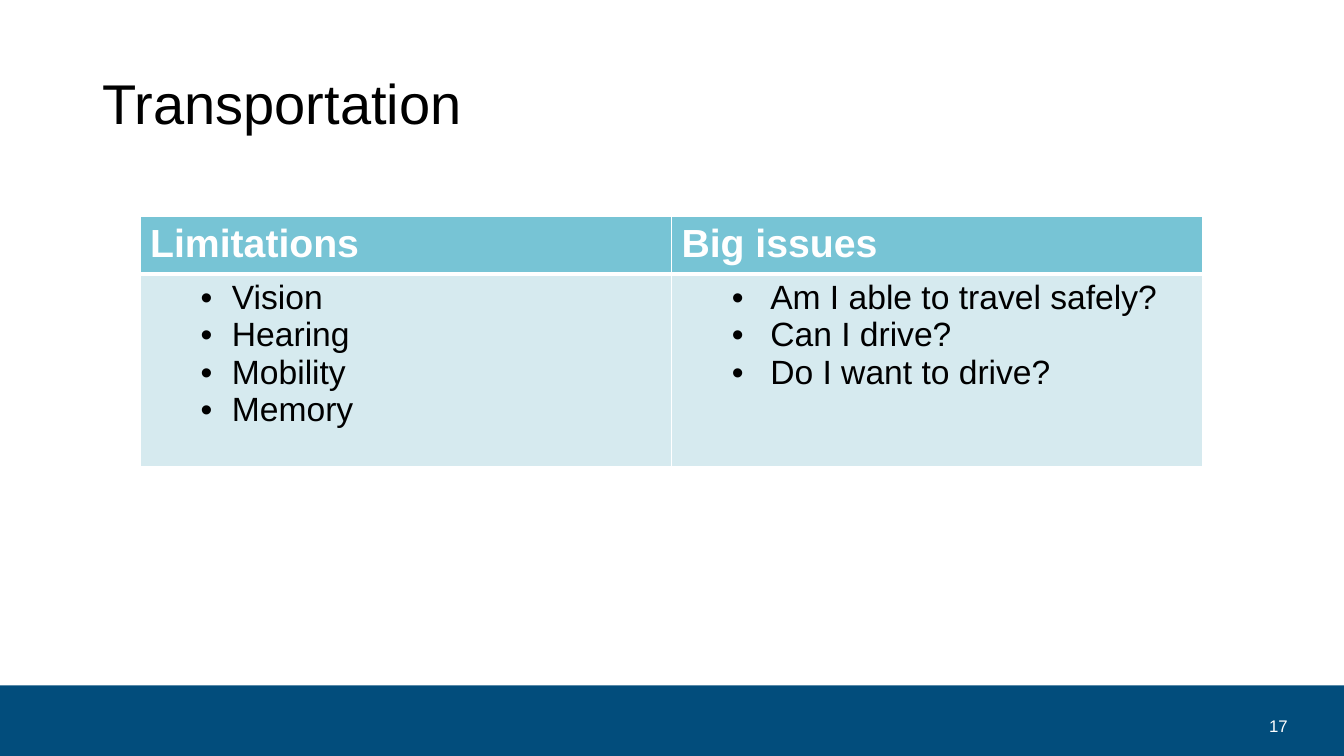
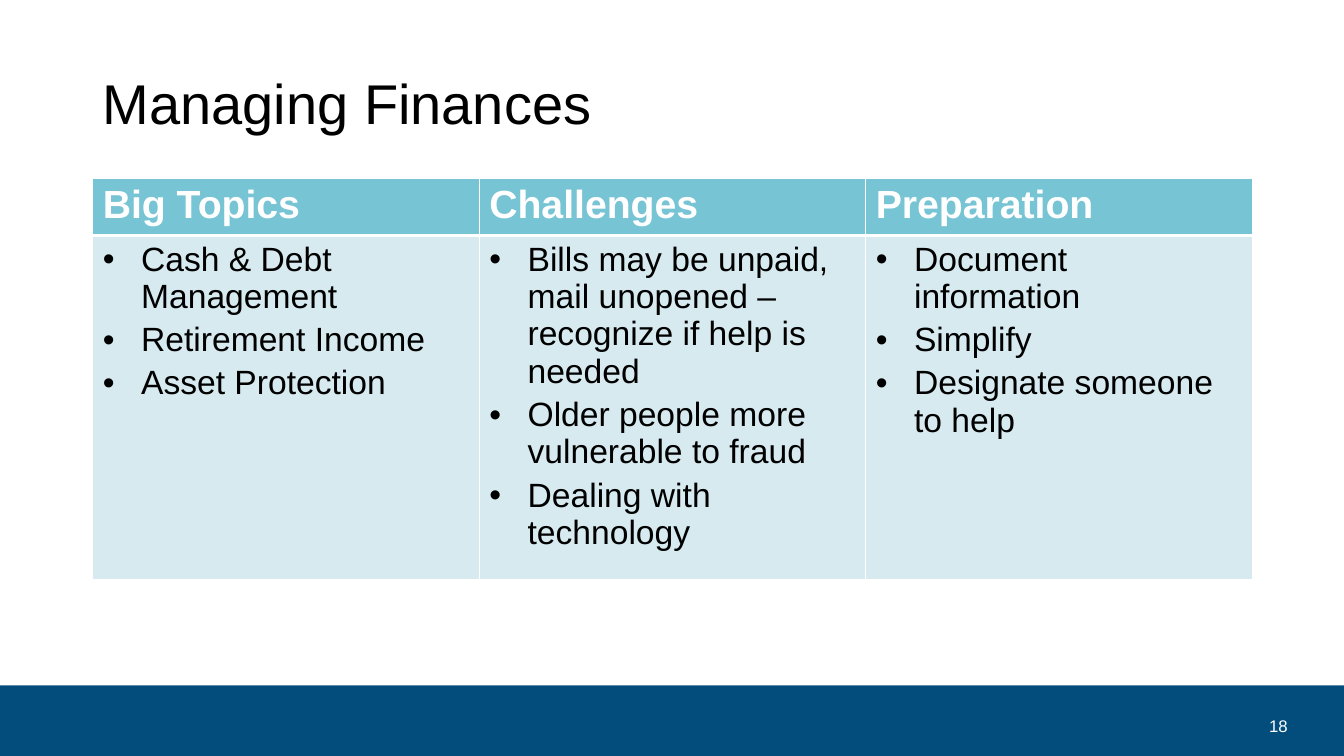
from lxml.etree import SubElement
from pptx import Presentation
from pptx.dml.color import RGBColor
from pptx.enum.shapes import MSO_SHAPE
from pptx.enum.text import MSO_ANCHOR, PP_ALIGN
from pptx.oxml.ns import qn
from pptx.util import Inches, Pt

# Content: each column is (heading, bullet indent, hanging indent, items)
SLIDES = [
    {"title": "Transportation", "number": 17,
     "table": (1.39, 2.15, 10.54), "body_height": 1.91, "space_before": 0,
     "columns": [
         ("Limitations", 0.81, 0.31, ["Vision", "Hearing", "Mobility", "Memory"]),
         ("Big issues", 0.88, 0.38,
          ["Am I able to travel safely?", "Can I drive?", "Do I want to drive?"]),
     ]},
    {"title": "Managing Finances", "number": 18,
     "table": (0.92, 1.77, 11.5), "body_height": 3.18, "space_before": 4,
     "columns": [
         ("Big Topics", 0.38, 0.38,
          ["Cash & Debt Management", "Retirement Income", "Asset Protection"]),
         ("Challenges", 0.38, 0.38,
          ["Bills may be unpaid, mail unopened – recognize if help is needed",
           "Older people more vulnerable to fraud",
           "Dealing with technology"]),
         ("Preparation", 0.38, 0.38,
          ["Document information", "Simplify", "Designate someone to help"]),
     ]},
]

# Shared style
FONT = "Arial"
BLACK = RGBColor(0x00, 0x00, 0x00)
WHITE = RGBColor(0xFF, 0xFF, 0xFF)
NAVY = RGBColor(0x02, 0x4D, 0x7C)
TEAL = RGBColor(0x77, 0xC4, 0xD5)
PALE = RGBColor(0xD6, 0xEA, 0xEF)
HEADER_HEIGHT = 0.53
THIN, THICK = 1, 3


def style(p, size, color, bold=False):
    for r in p.runs:
        r.font.name = FONT
        r.font.size = Pt(size)
        r.font.color.rgb = color
        r.font.bold = bold


def add_text(s, text, box, size, color, align=PP_ALIGN.LEFT):
    tf = s.shapes.add_textbox(*map(Inches, box)).text_frame
    tf.word_wrap = True
    tf.vertical_anchor = MSO_ANCHOR.MIDDLE
    tf.text = text
    p = tf.paragraphs[0]
    p.alignment = align
    style(p, size, color)
    return p


def add_frame(s, title, number):
    """Bottom band, title and slide number."""
    band = s.shapes.add_shape(MSO_SHAPE.RECTANGLE, 0, Inches(6.8),
                              prs.slide_width, Inches(0.7))
    band.shadow.inherit = False
    band.fill.solid()
    band.fill.fore_color.rgb = NAVY
    band.line.fill.background()
    p = add_text(s, title, (0.92, 0.36, 11.5, 1.4), 40, BLACK)
    p.line_spacing = 0.9
    add_text(s, str(number), (11.97, 7, 0.9, 0.4), 12, WHITE, PP_ALIGN.RIGHT)


def format_cell(cell, fill, top, bottom):
    tcPr = cell._tc.get_or_add_tcPr()
    for side, width in (("L", THIN), ("R", THIN), ("T", top), ("B", bottom)):
        ln = SubElement(tcPr, qn(f"a:ln{side}"), w=str(Pt(width)))
        solid = SubElement(ln, qn("a:solidFill"))
        SubElement(solid, qn("a:srgbClr"), val=str(WHITE))
    cell.fill.solid()
    cell.fill.fore_color.rgb = fill


def add_bullet(p, indent, hanging):
    pPr = p._p.get_or_add_pPr()
    pPr.set("marL", str(Inches(indent)))
    pPr.set("indent", str(-Inches(hanging)))
    SubElement(pPr, qn("a:buFont"), typeface=FONT)
    SubElement(pPr, qn("a:buChar"), char="•")


def add_columns(s, columns, place, body_height, space_before):
    left, top, width = map(Inches, place)
    heights = [Inches(HEADER_HEIGHT), Inches(body_height)]
    table = s.shapes.add_table(2, len(columns), left, top, width, sum(heights)).table
    for row, height in zip(table.rows, heights):
        row.height = height

    for i, (heading, indent, hanging, items) in enumerate(columns):
        table.columns[i].width = width // len(columns)
        header, body = table.cell(0, i), table.cell(1, i)
        format_cell(header, TEAL, THIN, THICK)
        format_cell(body, PALE, THICK, THIN)
        header.text_frame.text = heading
        style(header.text_frame.paragraphs[0], 28, WHITE, bold=True)

        tf = body.text_frame
        tf.text = "\n".join(items)
        for j, p in enumerate(tf.paragraphs):
            add_bullet(p, indent, hanging)
            if j and space_before:
                p.space_before = Pt(space_before)
            style(p, 24, BLACK)


# Build the slides
prs = Presentation()
prs.slide_width, prs.slide_height = Inches(13.33), Inches(7.5)
for content in SLIDES:
    s = prs.slides.add_slide(prs.slide_layouts[6])
    add_frame(s, content["title"], content["number"])
    add_columns(s, content["columns"], content["table"],
                content["body_height"], content["space_before"])
prs.save("out.pptx")
